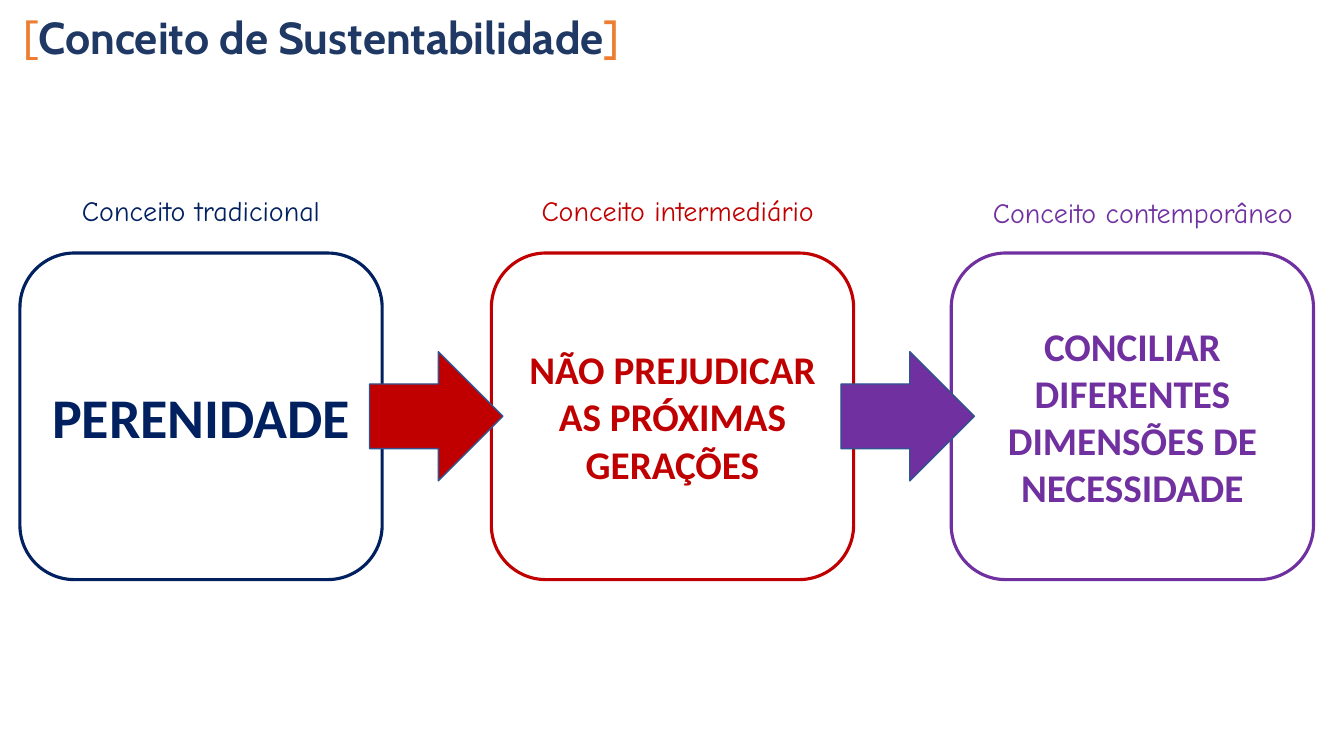
from dataclasses import dataclass

from pptx import Presentation
from pptx.dml.color import RGBColor as Rgb
from pptx.enum.shapes import MSO_SHAPE as Kind
from pptx.enum.text import MSO_ANCHOR as Anchor
from pptx.enum.text import MSO_AUTO_SIZE as Fit
from pptx.enum.text import PP_ALIGN as Align
from pptx.util import Emu, Pt


@dataclass(frozen=True)
class Theme:
    white: str = "FFFFFF"
    orange: str = "ED7D31"
    ink: str = "1F3864"
    navy: str = "002060"
    red: str = "C00000"
    purple: str = "7030A0"
    edge: str = "31538F"
    head: int = 32
    large: int = 40
    body: int = 28
    label: int = 20
    title: str = "Cabin"
    main: str = "Calibri"
    hand: str = "Comic Neue"


class Board:
    PX = 9525  # EMU in one px

    def __init__(self, deck, theme):
        self.theme = theme
        self.slide = deck.slides.add_slide(deck.slide_layouts[6])

    def place(self, *box):
        return [Emu(n * self.PX) for n in box]

    def add_words(self, para, text, color, **form):
        run = para.add_run()
        run.text = text
        for key, value in form.items():
            setattr(run.font, key, value)
        run.font.color.rgb = Rgb.from_string(color)

    def text(self, box, runs, align=Align.LEFT, **form):
        frame = self.slide.shapes.add_textbox(*self.place(*box)).text_frame
        frame.word_wrap = True
        frame.auto_size = Fit.SHAPE_TO_FIT_TEXT
        para = frame.paragraphs[0]
        para.alignment = align
        for words, color, bold in runs:
            self.add_words(para, words, color, bold=bold, **form)

    def shape(self, kind, box, fill, line, width):
        item = self.slide.shapes.add_shape(kind, *self.place(*box))
        item.shadow.inherit = False
        item.fill.solid()
        item.fill.fore_color.rgb = Rgb.from_string(fill)
        item.line.color.rgb = Rgb.from_string(line)
        item.line.width = Pt(width)
        return item

    def card(self, box, words, color, size):
        item = self.shape(Kind.ROUNDED_RECTANGLE, box, self.theme.white, color, 2.25)
        frame = item.text_frame
        frame.word_wrap = True
        frame.vertical_anchor = Anchor.MIDDLE
        para = frame.paragraphs[0]
        para.alignment = Align.CENTER
        self.add_words(para, words, color, size=Pt(size), name=self.theme.main, bold=True)

    def arrow(self, box, color):
        self.shape(Kind.RIGHT_ARROW, box, color, self.theme.edge, 1)


def main():
    deck = Presentation()
    deck.slide_width, deck.slide_height = Emu(1280 * Board.PX), Emu(720 * Board.PX)
    theme = Theme()
    board = Board(deck, theme)

    # Title in brackets
    board.text(
        (13, 5, 908, 61),
        [("[", theme.orange, False),
         ("Conceito de Sustentabilidade", theme.ink, True),
         ("]", theme.orange, False)],
        size=Pt(theme.head), name=theme.title)

    # Stages: card left, words, size, colour, label, label box
    stages = [
        (19, "PERENIDADE", theme.large, theme.navy,
         "Conceito tradicional", (53, 180, 277, 42)),
        (468, "NÃO PREJUDICAR AS PRÓXIMAS GERAÇÕES", theme.body, theme.red,
         "Conceito intermediário", (479, 180, 333, 42)),
        (906, "CONCILIAR DIFERENTES DIMENSÕES DE NECESSIDADE", theme.body,
         theme.purple, "Conceito contemporâneo", (922, 181, 333, 42)),
    ]
    for left, words, size, color, label, spot in stages:
        board.card((left, 241, 345, 311), words, color, size)
        board.text(spot, [(label, color, False)], Align.CENTER,
                   size=Pt(theme.label), name=theme.hand)

    # Arrows take the colour of the stage they lead to
    for start, end in zip(stages, stages[1:]):
        board.arrow((start[0] + 333, 335, 127, 123), end[3])

    deck.save("out.pptx")


if __name__ == "__main__":
    main()
